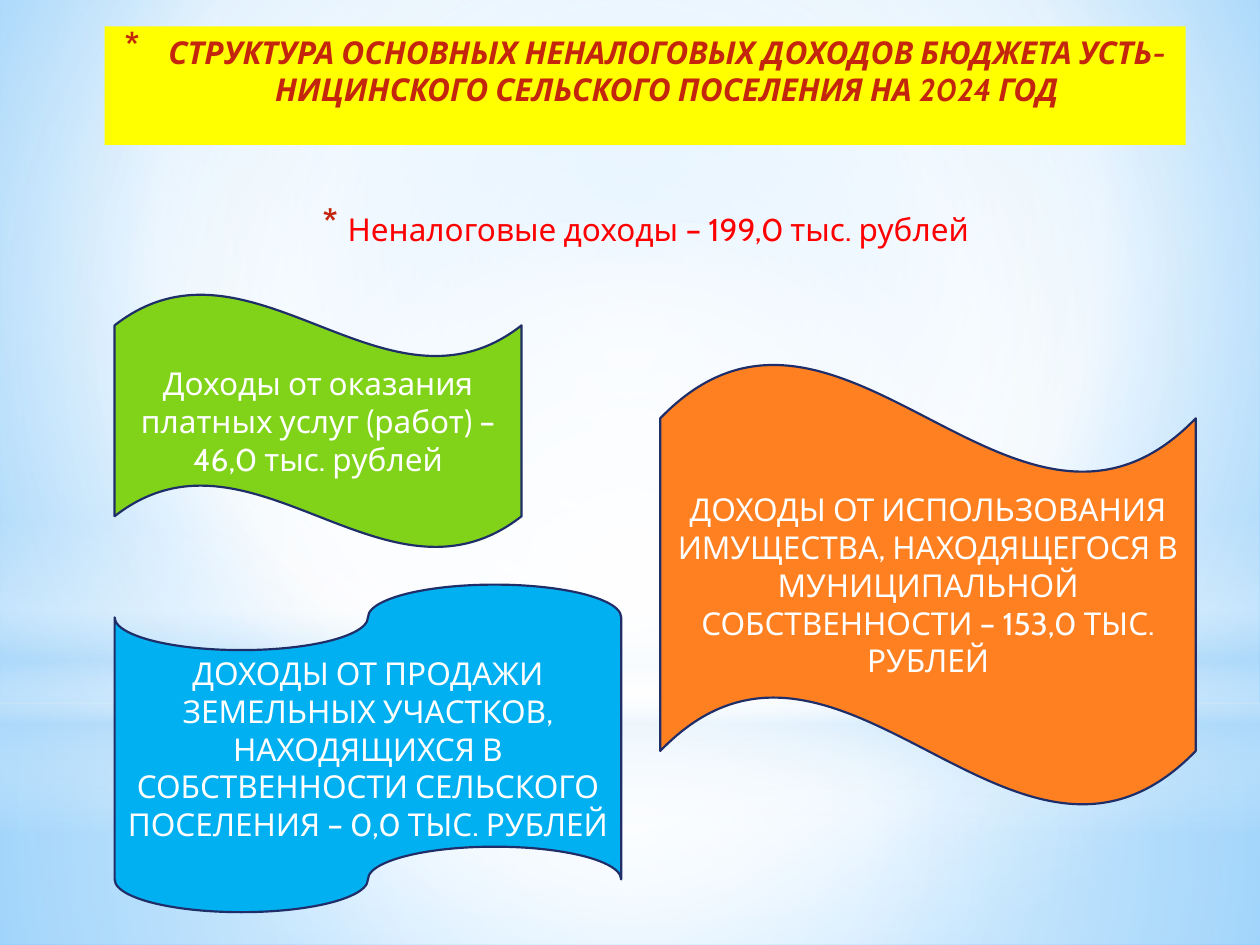
import pptx
import pptx.util
import pptx.oxml
import pptx.oxml.ns
import pptx.dml.color
import pptx.enum.shapes
import pptx.enum.text

Inches = pptx.util.Inches
Pt = pptx.util.Pt
SHAPE = pptx.enum.shapes.MSO_SHAPE
ALIGN = pptx.enum.text.PP_ALIGN
ANCHOR = pptx.enum.text.MSO_ANCHOR

COLORS = {
    "white": "FFFFFF", "pale": "B4DCFA", "sky": "9ED5FF", "azure": "5BB9FF",
    "yellow": "FFFF00", "brick": "C3260C", "red": "FF0000", "navy": "1F2E69",
    "green": "81D31A", "orange": "FF8021", "blue": "00B0F0",
}
MID = (50, 50, 50, 50)


def color(name):
    return pptx.dml.color.RGBColor.from_string(COLORS[name])


def grade(props, stops, focus=None):
    """Swap a solid fill for a gradient: round about focus, else downward."""
    marks = "".join(
        f'<a:gs pos="{pos * 1000}"><a:srgbClr val="{COLORS[name]}">'
        f'<a:alpha val="{alpha * 1000}"/></a:srgbClr></a:gs>'
        for pos, name, alpha in stops)
    if focus:
        sides = " ".join(f'{side}="{val * 1000}"' for side, val in zip("ltrb", focus))
        way = f'<a:path path="circle"><a:fillToRect {sides}/></a:path>'
    else:
        way = '<a:lin ang="5400000" scaled="0"/>'
    fill = pptx.oxml.parse_xml(
        f'<a:gradFill {pptx.oxml.ns.nsdecls("a")} rotWithShape="1">'
        f'<a:gsLst>{marks}</a:gsLst>{way}</a:gradFill>')
    props.replace(props.find(pptx.oxml.ns.qn("a:solidFill")), fill)


def add_shape(slide, kind, box, fill, line=None):
    shape = slide.shapes.add_shape(kind, *map(Inches, box))
    shape.shadow.inherit = False
    shape.fill.solid()
    shape.fill.fore_color.rgb = color(fill)
    if line:
        shape.line.color.rgb = color(line)
        shape.line.width = Pt(1.25)
    else:
        shape.line.fill.background()
    return shape


def add_glow(slide, kind, box, stops, focus=None):
    shape = add_shape(slide, kind, box, "white")
    grade(shape._element.spPr, stops, focus)


def set_font(para, tint, bold=None):
    font = para.font
    font.name, font.size = "Cabin", Pt(18)
    font.bold = font.italic = bold
    font.color.rgb = color(tint)


def add_wave(slide, kind, box, fill, text):
    frame = add_shape(slide, kind, box, fill, "navy").text_frame
    frame.word_wrap = True
    frame.vertical_anchor = ANCHOR.MIDDLE
    para = frame.paragraphs[0]
    para.text = text
    para.alignment = ALIGN.CENTER
    set_font(para, "white")


def add_star(slide, box, text, tint, margin, hang, size, align, bold=None):
    """Add a text box whose one paragraph has a star bullet."""
    shape = slide.shapes.add_textbox(*map(Inches, box))
    frame = shape.text_frame
    frame.word_wrap = True
    para = frame.paragraphs[0]
    para.text = text
    props = para._p.get_or_add_pPr()
    props.set("marL", str(Inches(margin)))
    props.set("indent", str(-Inches(hang)))
    for tag in (f'<a:buClr %s><a:srgbClr val="{COLORS["brick"]}"/></a:buClr>',
                f'<a:buSzPct %s val="{size * 1000}"/>',
                '<a:buChar %s char="*"/>'):
        props.append(pptx.oxml.parse_xml(tag % pptx.oxml.ns.nsdecls("a")))
    para.alignment = align
    set_font(para, tint, bold)
    return shape


def add_back(slide):
    slide.background.fill.solid()
    props = slide._element.find(".//" + pptx.oxml.ns.qn("p:bgPr"))
    grade(props, [(0, "sky", 100), (60, "white", 100), (100, "azure", 100)],
          (20, 10, 20, 60))
    # Floor, wall, horizon band and central light
    add_glow(slide, SHAPE.RECTANGLE, (0, 5.58, 10, 1.92),
             [(0, "white", 91), (37, "white", 76), (100, "pale", 79)], MID)
    add_glow(slide, SHAPE.RECTANGLE, (0, 0, 10, 5.58),
             [(0, "white", 89), (48, "white", 62), (100, "pale", 79)], MID)
    add_glow(slide, SHAPE.RECTANGLE, (0, 4.12, 10, 2.5),
             [(0, "white", 0), (29, "white", 30), (45, "pale", 40),
              (55, "white", 26), (65, "pale", 60), (100, "white", 0)])
    add_glow(slide, SHAPE.OVAL, (0, 1.75, 10, 5.58),
             [(0, "white", 100), (56, "white", 0)], MID)


def main():
    deck = pptx.Presentation()
    deck.slide_width, deck.slide_height = Inches(10), Inches(7.5)
    slide = deck.slides.add_slide(deck.slide_layouts[6])
    add_back(slide)

    # Title and total
    title = add_star(
        slide, (0.83, 0.21, 8.58, 0.94),
        "СТРУКТУРА ОСНОВНЫХ НЕНАЛОГОВЫХ ДОХОДОВ БЮДЖЕТА "
        "УСТЬ-НИЦИНСКОГО СЕЛЬСКОГО ПОСЕЛЕНИЯ НА 2024 ГОД",
        "brick", 0.35, 0.35, 128, ALIGN.CENTER, True)
    title.fill.solid()
    title.fill.fore_color.rgb = color("yellow")
    add_star(slide, (1.14, 1.62, 7.95, 4.9),
             "Неналоговые доходы – 199,0 тыс. рублей",
             "red", 1.52, 0.2, 130, ALIGN.LEFT)

    # Sources of income
    add_wave(slide, SHAPE.WAVE, (0.91, 2.33, 3.23, 2.02), "green",
             "Доходы от оказания платных услуг (работ) – 46,0 тыс. рублей")
    add_wave(slide, SHAPE.WAVE, (5.24, 2.88, 4.25, 3.52), "orange",
             "ДОХОДЫ ОТ ИСПОЛЬЗОВАНИЯ ИМУЩЕСТВА, НАХОДЯЩЕГОСЯ "
             "В МУНИЦИПАЛЬНОЙ СОБСТВЕННОСТИ – 153,0 ТЫС. РУБЛЕЙ")
    add_wave(slide, SHAPE.FLOWCHART_PUNCHED_TAPE, (0.91, 4.64, 4.02, 2.6), "blue",
             "ДОХОДЫ ОТ ПРОДАЖИ ЗЕМЕЛЬНЫХ УЧАСТКОВ, НАХОДЯЩИХСЯ "
             "В СОБСТВЕННОСТИ СЕЛЬСКОГО ПОСЕЛЕНИЯ – 0,0 ТЫС. РУБЛЕЙ")

    deck.save("out.pptx")


if __name__ == "__main__":
    main()
